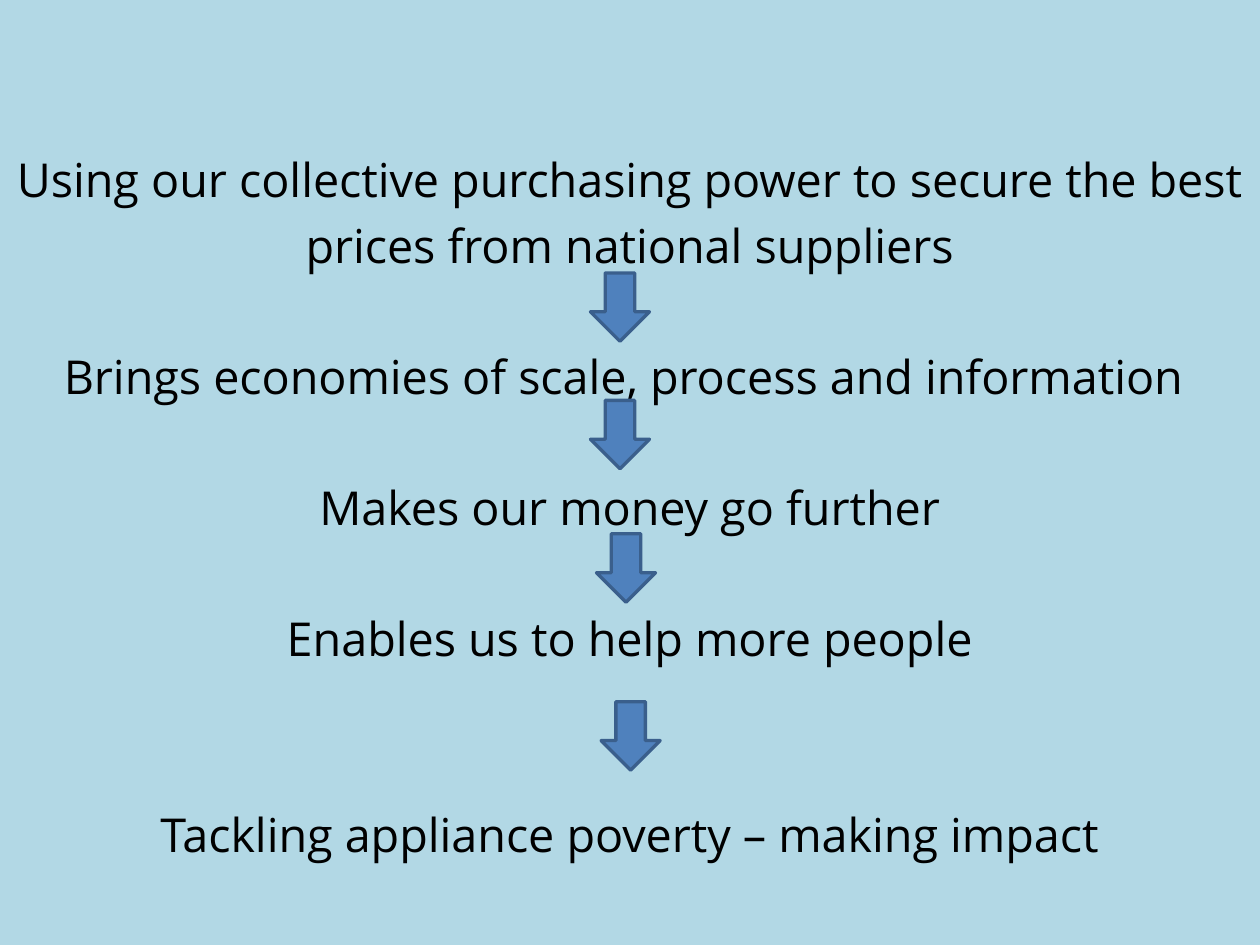
from pptx import Presentation
from pptx.dml.color import RGBColor
from pptx.enum.shapes import MSO_SHAPE
from pptx.enum.text import PP_ALIGN, MSO_AUTO_SIZE
from pptx.util import Cm, Pt

HUES = {"back": "B2D8E5", "text": "000000", "arrow": "4F81BD", "edge": "3A5F8C"}
FONT = "Open Sans"
SIZE = 28.5
LEAD = 39.9  # line height in points

# Each step with the number of free lines above it
STEPS = [
    ("Using our collective purchasing power to secure the best "
     "prices from national suppliers", 0),
    ("Brings economies of scale, process and information ", 1),
    ("Makes our money go further", 1),
    (" Enables us to help more people ", 1),
    ("Tackling appliance poverty – making impact", 2),
]

# Left and top of each arrow, in cm
ARROWS = [(12.7, 5.87), (12.7, 8.61), (12.83, 11.48), (12.93, 15.09)]


def hue(name):
    return RGBColor.from_string(HUES[name])


def add_steps(slide):
    box = slide.shapes.add_textbox(Cm(0.3), Cm(3.05), Cm(26.49), Cm(15.57))
    frame = box.text_frame
    frame.word_wrap = True
    frame.auto_size = MSO_AUTO_SIZE.SHAPE_TO_FIT_TEXT
    frame.margin_left = frame.margin_right = Cm(0)
    frame.margin_top = frame.margin_bottom = Cm(0)
    frame.text = "\n".join(text for text, gap in STEPS)
    for para, (text, gap) in zip(frame.paragraphs, STEPS):
        para.alignment = PP_ALIGN.CENTER
        para.line_spacing = Pt(LEAD)
        para.space_before = Pt(gap * LEAD)
        font = para.runs[0].font
        font.name = FONT
        font.size = Pt(SIZE)
        font.color.rgb = hue("text")


def add_arrow(slide, left, top):
    arrow = slide.shapes.add_shape(
        MSO_SHAPE.DOWN_ARROW, Cm(left), Cm(top), Cm(1.27), Cm(1.47))
    arrow.shadow.inherit = False
    arrow.fill.solid()
    arrow.fill.fore_color.rgb = hue("arrow")
    arrow.line.color.rgb = hue("edge")
    arrow.line.width = Pt(2)


def main():
    deck = Presentation()
    deck.slide_width, deck.slide_height = Cm(27.1), Cm(20.32)
    slide = deck.slides.add_slide(deck.slide_layouts[6])

    # Background
    fill = slide.background.fill
    fill.solid()
    fill.fore_color.rgb = hue("back")

    # Steps and the arrows between them
    add_steps(slide)
    for left, top in ARROWS:
        add_arrow(slide, left, top)

    deck.save("out.pptx")


if __name__ == "__main__":
    main()
